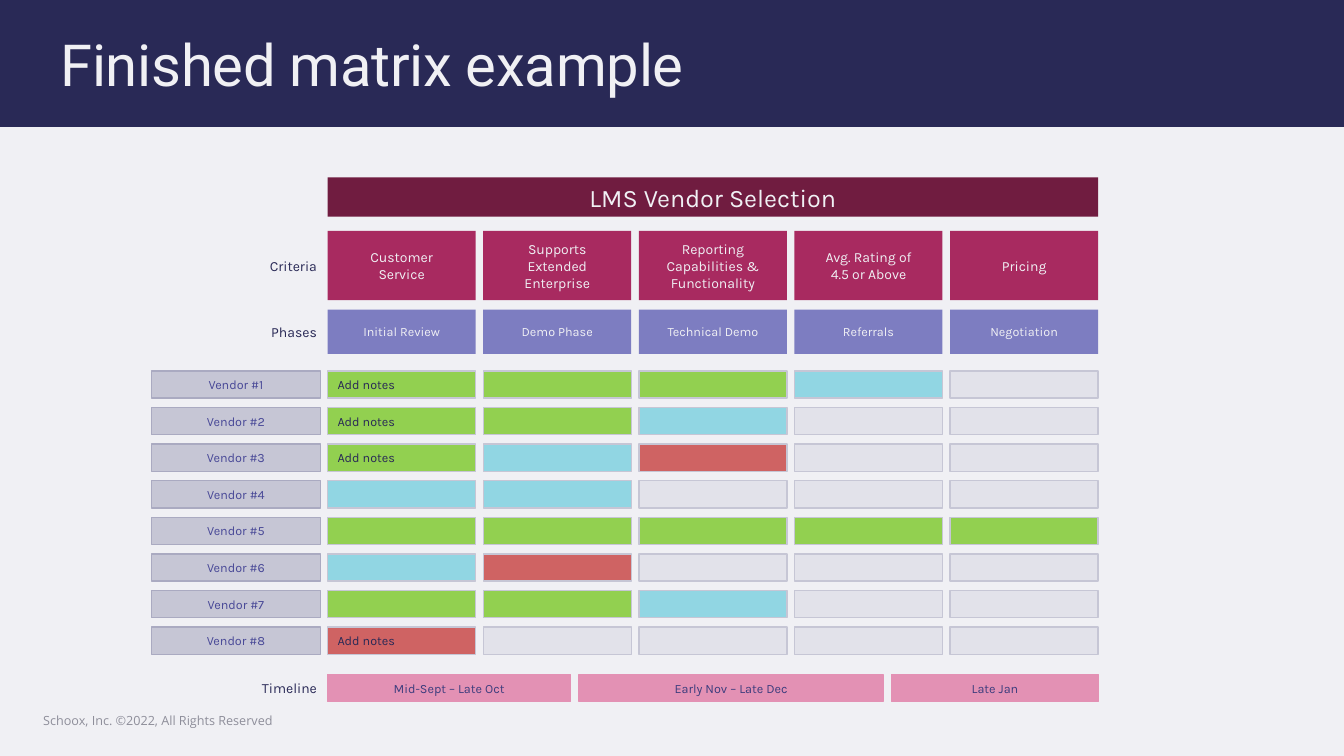
from dataclasses import dataclass
from typing import NamedTuple

from pptx import Presentation
from pptx.dml.color import RGBColor
from pptx.enum.shapes import MSO_SHAPE
from pptx.enum.text import MSO_ANCHOR, PP_ALIGN
from pptx.util import Pt

RECT = MSO_SHAPE.RECTANGLE
MIDDLE = MSO_ANCHOR.MIDDLE
LEFT, CENTER, RIGHT = PP_ALIGN.LEFT, PP_ALIGN.CENTER, PP_ALIGN.RIGHT


@dataclass(frozen=True)
class Theme:
    """Colours, fonts and type sizes of the deck."""
    page: str = "F0F0F4"
    navy: str = "292956"
    wine: str = "701C40"
    berry: str = "A82A60"
    violet: str = "7D7DC1"
    grey: str = "C6C6D5"
    edge: str = "AAAAC1"
    pink: str = "E391B4"
    vendor: str = "484897"
    date: str = "3C3C7D"
    muted: str = "8E8E9A"
    green: str = "92D050"
    blue: str = "91D6E3"
    red: str = "CF6363"
    empty: str = "E2E2EA"
    body: str = "Karla"
    head: str = "Roboto"
    foot: str = "Open Sans"
    title: float = 41.4
    banner: float = 18
    label: float = 10
    small: float = 9


class Box(NamedTuple):
    """A rectangle in points."""
    x: float
    y: float
    w: float
    h: float


THEME = Theme()
COLS, GAP = 5, 5.4
CRITERIA = ["Customer Service", "Supports Extended Enterprise",
            "Reporting Capabilities & Functionality",
            "Avg. Rating of 4.5 or Above", "Pricing"]
PHASES = ["Initial Review", "Demo Phase", "Technical Demo",
          "Referrals", "Negotiation"]
STATUS = {"G": THEME.green, "B": THEME.blue, "R": THEME.red, "-": THEME.empty}
VENDORS = ["GGGB-", "GGB--", "GBR--", "BB---",
           "GGGGG", "BR---", "GGB--", "R----"]
NOTED = {1, 2, 3, 8}
DATES = [("Mid-Sept – Late Oct", 173.5), ("Early Nov – Late Dec", 217.4),
         ("Late Jan", 147.6)]


def write(shape, text, size, color, align=CENTER, font=THEME.body, inset=7.2):
    """Set and format the text of a shape."""
    frame = shape.text_frame
    frame.word_wrap = True
    frame.vertical_anchor = MIDDLE
    frame.margin_left = frame.margin_right = Pt(inset)
    frame.margin_top = frame.margin_bottom = 0
    frame.text = text
    para = frame.paragraphs[0]
    para.alignment = align
    run = para.runs[0]
    run.font.size, run.font.name = Pt(size), font
    run.font.color.rgb = RGBColor.from_string(color)
    return run


def block(slide, box, fill, line=None):
    """Add a filled rectangle with an optional outline."""
    shape = slide.shapes.add_shape(RECT, *map(Pt, box))
    shape.shadow.inherit = False
    shape.fill.solid()
    shape.fill.fore_color.rgb = RGBColor.from_string(fill)
    if line:
        shape.line.color.rgb = RGBColor.from_string(line)
        shape.line.width = Pt(1)
    else:
        shape.line.fill.background()
    return shape


def label(slide, box, text, size, color, **style):
    """Add a text box."""
    return write(slide.shapes.add_textbox(*map(Pt, box)),
                 text, size, color, **style)


def side(slide, box, text):
    """Add a row label that ends at the left edge of the box."""
    spot = Box(box.x - 62.6, box.y, 62, box.h)
    label(slide, spot, text, THEME.label, THEME.navy, align=RIGHT)


def split(box):
    """Cut a row into equal cells."""
    wide = (box.w - GAP * (COLS - 1)) / COLS
    return [Box(box.x + i * (wide + GAP), box.y, wide, box.h)
            for i in range(COLS)]


def header(slide, box):
    """Draw the title band."""
    block(slide, box, THEME.navy)
    spot = Box(box.x + 36, box.y + 15, 789, 60)
    run = label(slide, spot, "Finished matrix example", THEME.title,
                THEME.page, align=LEFT, font=THEME.head)
    run.font._element.set("spc", "-20")


def footer(slide, box):
    """Write the copyright line."""
    label(slide, box, "Schoox, Inc. ©2022, All Rights Reserved", THEME.small,
          THEME.muted, align=LEFT, font=THEME.foot)


def banner(slide, box):
    """Draw the heading of the matrix."""
    write(block(slide, box, THEME.wine), "LMS Vendor Selection",
          THEME.banner, THEME.page)


def heads(slide, box, name, items, fill, size, inset):
    """Draw one row of column heads with its label."""
    side(slide, box, name)
    for text, cell in zip(items, split(box)):
        write(block(slide, cell, fill), text, size, THEME.page, inset=inset)


def grid(slide, box):
    """Draw the vendor names and their status cells."""
    high = 19.4
    step = (box.h - high) / (len(VENDORS) - 1)
    for num, row in enumerate(VENDORS, 1):
        line = Box(box.x, box.y + (num - 1) * step, box.w, high)
        name = block(slide, Box(box.x - 126, line.y, 121, high),
                     THEME.grey, THEME.edge)
        write(name, f"Vendor #{num}", THEME.small, THEME.vendor)
        cells = [block(slide, cell, STATUS[key], THEME.grey)
                 for key, cell in zip(row, split(line))]
        if num in NOTED:
            write(cells[0], "Add notes", THEME.small, THEME.navy, align=LEFT)


def dates(slide, box):
    """Draw the timeline bars."""
    side(slide, box, "Timeline")
    left = box.x
    for text, wide in DATES:
        bar = block(slide, Box(left, box.y, wide, box.h),
                    THEME.pink, THEME.pink)
        write(bar, text, THEME.small, THEME.date)
        left += wide + 6


def matrix(slide, box):
    """Stack the parts of the matrix inside the box."""
    def part(top, high):
        return Box(box.x, box.y + top, box.w, high)

    banner(slide, part(0, 28))
    heads(slide, part(38.3, 49.5), "Criteria", CRITERIA, THEME.berry,
          THEME.label, 17)
    heads(slide, part(94.5, 31.7), "Phases", PHASES, THEME.violet,
          THEME.small, 7.2)
    grid(slide, part(138.3, 202.4))
    dates(slide, part(355.2, 19.4))


def main():
    """Build the deck and save it."""
    deck = Presentation()
    deck.slide_width, deck.slide_height = Pt(960), Pt(540)
    slide = deck.slides.add_slide(deck.slide_layouts[6])
    back = slide.background.fill
    back.solid()
    back.fore_color.rgb = RGBColor.from_string(THEME.page)
    header(slide, Box(0, 0, 960, 90.7))
    footer(slide, Box(23.8, 500.4, 216, 28.8))
    matrix(slide, Box(234, 126.7, 550.4, 374.6))
    deck.save("out.pptx")


if __name__ == "__main__":
    main()
